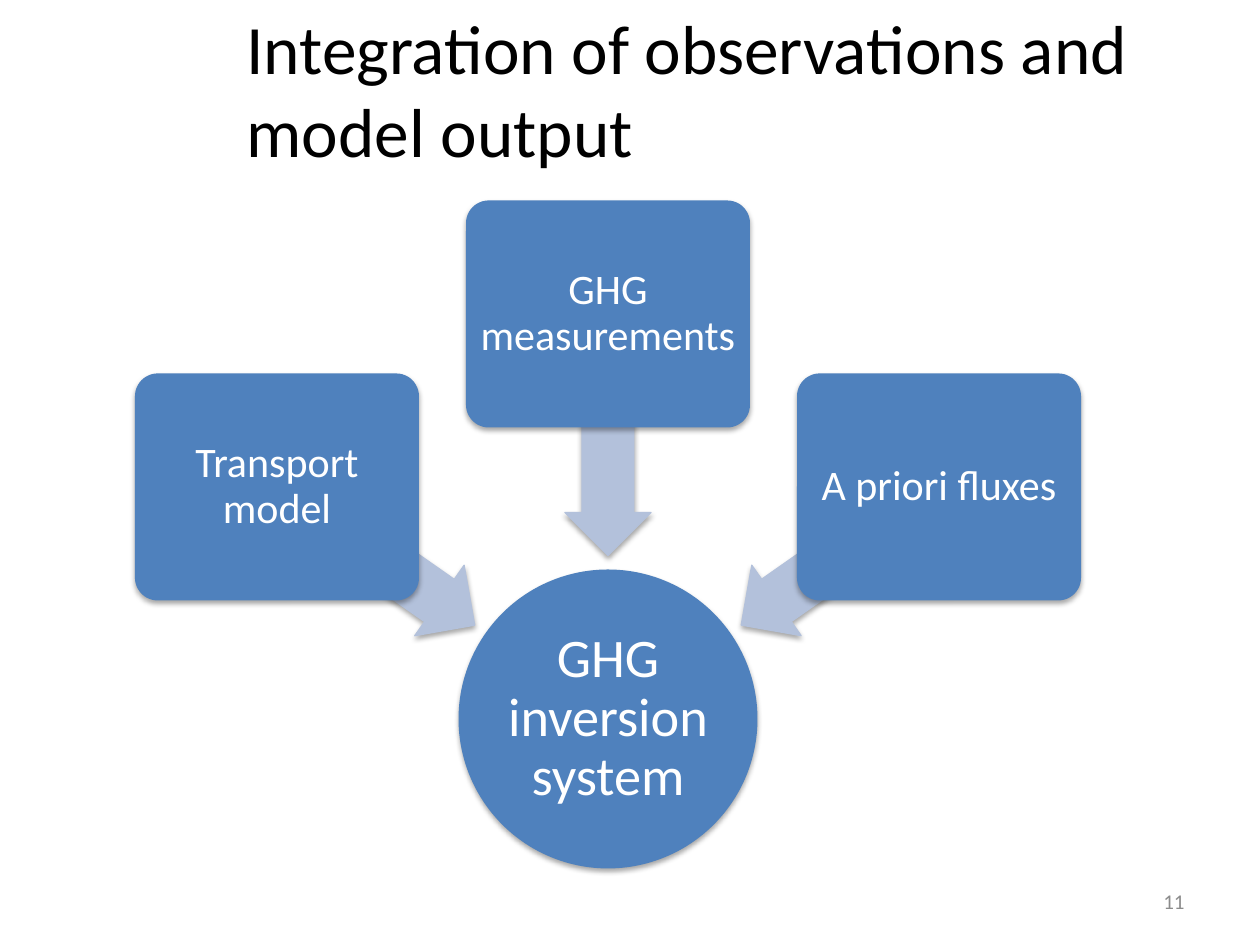
from dataclasses import dataclass

from lxml.etree import SubElement
from pptx import Presentation
from pptx.dml.color import RGBColor
from pptx.enum.shapes import MSO_SHAPE
from pptx.enum.text import MSO_ANCHOR, MSO_AUTO_SIZE, PP_ALIGN
from pptx.oxml.ns import qn
from pptx.util import Emu, Pt

EMU_PER_PX = 914400 / 126
COLORS = {
    "title": "000000",
    "node": "4F81BD",
    "arrow": "B3C1DB",
    "node_text": "FFFFFF",
    "number": "8C8C8C",
    "shadow": "000000",
}
FONT = "Calibri"

# Diagram geometry in px
CENTER_X = 608
BOX_WIDTH, BOX_HEIGHT = 284, 227
ARROW_WIDTH, ARROW_HEIGHT = 241, 86
CIRCLE_SIZE, CIRCLE_CENTER_Y = 299, 719
BOX_OFFSET, ARROW_OFFSET = 331, 232


@dataclass(frozen=True)
class Source:
    label: str
    side: int  # -1 left, 0 middle, 1 right of the circle
    box_center_y: int
    arrow_center_y: int
    rotation: int


SOURCES = [
    Source("Transport model", -1, 487, 556, 215),
    Source("GHG measurements", 0, 314, 435, 270),
    Source("A priori fluxes", 1, 487, 556, 325),
]


def px(value: float) -> Emu:
    return Emu(round(value * EMU_PER_PX))


def color(name: str) -> RGBColor:
    return RGBColor.from_string(COLORS[name])


def write_text(shape, text: str, *, size: float, color_name: str,
               align=PP_ALIGN.LEFT, inset=None, line_spacing=None) -> None:
    frame = shape.text_frame
    frame.word_wrap = True
    frame.auto_size = MSO_AUTO_SIZE.NONE
    frame.vertical_anchor = MSO_ANCHOR.MIDDLE
    if inset is not None:
        frame.margin_left = frame.margin_right = px(inset)
        frame.margin_top = frame.margin_bottom = px(inset)
    frame.text = text
    paragraph = frame.paragraphs[0]
    paragraph.alignment = align
    if line_spacing is not None:
        paragraph.line_spacing = line_spacing
    font = paragraph.runs[0].font
    font.name, font.size = FONT, Pt(size)
    font.color.rgb = color(color_name)


def add_soft_shadow(shape) -> None:
    shape.shadow.inherit = False
    effects = shape.element.spPr.find(qn("a:effectLst"))
    shadow = SubElement(effects, qn("a:outerShdw"), blurRad=str(Pt(3.1)),
                        dist=str(Pt(1.8)), dir="5400000", rotWithShape="0")
    shade = SubElement(shadow, qn("a:srgbClr"), val=COLORS["shadow"])
    SubElement(shade, qn("a:alpha"), val="35000")


def add_centered_shape(slide, kind, center_x: int, center_y: int,
                       width: int, height: int, fill: str):
    shape = slide.shapes.add_shape(
        kind, px(center_x - width / 2), px(center_y - height / 2),
        px(width), px(height))
    shape.fill.solid()
    shape.fill.fore_color.rgb = color(fill)
    shape.line.fill.background()
    add_soft_shadow(shape)
    return shape


def add_arrow(slide, source: Source) -> None:
    arrow = add_centered_shape(
        slide, MSO_SHAPE.LEFT_ARROW, CENTER_X + source.side * ARROW_OFFSET,
        source.arrow_center_y, ARROW_WIDTH, ARROW_HEIGHT, "arrow")
    arrow.adjustments[0], arrow.adjustments[1] = 0.6, 0.5
    arrow.rotation = source.rotation
    arrow.line.color.rgb = color("arrow")
    arrow.line.width = Pt(0.75)


def add_box(slide, source: Source) -> None:
    box = add_centered_shape(
        slide, MSO_SHAPE.ROUNDED_RECTANGLE, CENTER_X + source.side * BOX_OFFSET,
        source.box_center_y, BOX_WIDTH, BOX_HEIGHT, "node")
    box.adjustments[0] = 0.1
    write_text(box, source.label, size=24, color_name="node_text",
               align=PP_ALIGN.CENTER, inset=2, line_spacing=0.9)


def main() -> None:
    presentation = Presentation()
    presentation.slide_width, presentation.slide_height = px(1260), px(945)
    slide = presentation.slides.add_slide(presentation.slide_layouts[5])

    # Title
    title = slide.shapes.title
    title.left, title.top, title.width, title.height = (
        px(value) for value in (234, 10, 1026, 157))
    write_text(title, "Integration of observations and model output",
               size=39.6, color_name="title")

    # Slide number
    number = slide.shapes.add_textbox(px(903), px(876), px(294), px(50))
    write_text(number, "11", size=12, color_name="number",
               align=PP_ALIGN.RIGHT)

    # Inversion system with its three sources
    circle = add_centered_shape(slide, MSO_SHAPE.OVAL, CENTER_X, CIRCLE_CENTER_Y,
                                CIRCLE_SIZE, CIRCLE_SIZE, "node")
    write_text(circle, "GHG inversion system", size=31, color_name="node_text",
               align=PP_ALIGN.CENTER, inset=2, line_spacing=0.9)
    for source in SOURCES:
        add_arrow(slide, source)
        add_box(slide, source)

    presentation.save("out.pptx")


if __name__ == "__main__":
    main()
